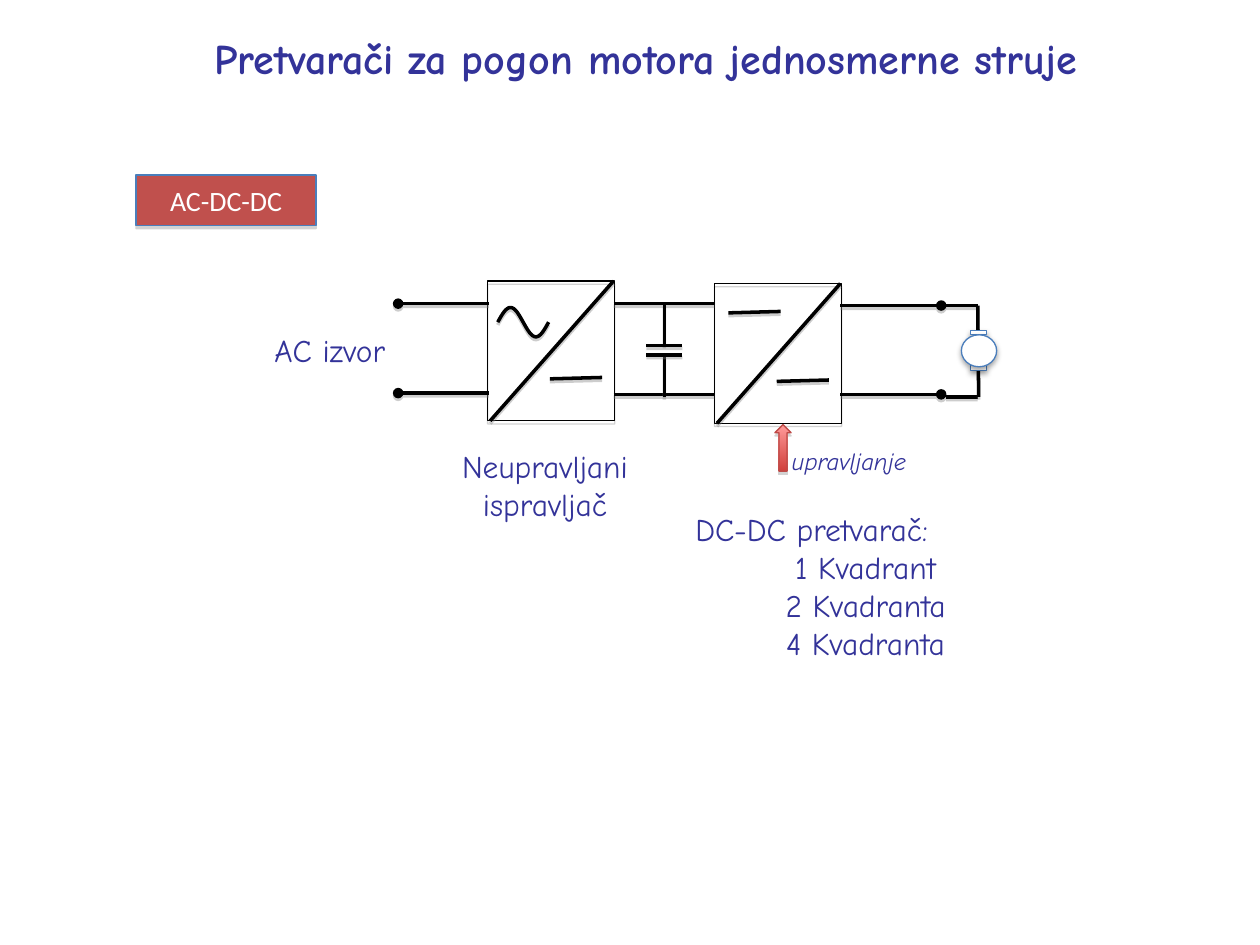
from dataclasses import dataclass
import math

from pptx import Presentation, util as u
from pptx.dml import color
from pptx.enum import shapes, text
from pptx.oxml import parse_xml
from pptx.oxml.ns import nsdecls

COLUMNS, ROWS = 100, 75
CELL = u.Inches(0.1)


@dataclass(frozen=True)
class Theme:
    font: str = "Comic Neue"
    tag_font: str = "Calibri"
    title: int = 24
    body: int = 18
    tag: int = 16
    note: int = 14
    ink: str = "333399"
    wire: str = "000000"
    white: str = "FFFFFF"
    tag_fill: str = "C0504D"
    tag_line: str = "4A7EBB"
    motor_line: str = "4B7EBC"
    arrow_light: str = "FF9A99"
    arrow_dark: str = "D1403C"
    arrow_line: str = "BE4B48"
    thick: float = 2
    thin: float = 0.75
    # Shadows: colour, opacity %, blur pt, distance pt
    shape_shadow: tuple = ("808080", 35, 0, 1.8)
    wire_shadow: tuple = ("808080", 38, 0, 1.6)
    motor_shadow: tuple = ("000000", 35, 3.1, 1.8)


THEME = Theme()


@dataclass(frozen=True)
class Box:
    """An area in grid columns and rows."""
    left: float
    top: float
    width: float
    height: float

    def point(self, x, y):
        return (round((self.left + x * self.width) * CELL),
                round((self.top + y * self.height) * CELL))

    def inner(self, x, y, width, height):
        return Box(self.left + x * self.width, self.top + y * self.height,
                   width * self.width, height * self.height)

    def frame(self):
        return [round(v * CELL) for v in (self.left, self.top, self.width, self.height)]


def rgb(value):
    return color.RGBColor.from_string(value)


def add_shadow(item, shadow):
    tint, opacity, blur, distance = shadow
    properties = item._element.spPr
    for old in properties.findall("{*}effectLst"):
        properties.remove(old)
    properties.append(parse_xml(
        f'<a:effectLst {nsdecls("a")}><a:outerShdw blurRad="{u.Pt(blur)}" '
        f'dist="{u.Pt(distance)}" dir="5400000" rotWithShape="0"><a:srgbClr val="{tint}">'
        f'<a:alpha val="{opacity * 1000}"/></a:srgbClr></a:outerShdw></a:effectLst>'))


def stroke(item, tint, width):
    item.line.color.rgb = rgb(tint)
    item.line.width = u.Pt(width)


def add_block(slide, kind, box, fill, line, shadow):
    block = slide.shapes.add_shape(kind, *box.frame())
    if fill:
        block.fill.solid()
        block.fill.fore_color.rgb = rgb(fill)
    else:
        block.fill.background()
    stroke(block, line, THEME.thin)
    add_shadow(block, shadow)
    return block


def add_wire(slide, box, start, end, terminal=False):
    wire = slide.shapes.add_connector(
        shapes.MSO_CONNECTOR.STRAIGHT, *box.point(*start), *box.point(*end))
    stroke(wire, THEME.wire, THEME.thick)
    if terminal:
        wire.line._get_or_add_ln().append(
            parse_xml(f'<a:tailEnd {nsdecls("a")} type="oval"/>'))
    add_shadow(wire, THEME.wire_shadow)


def write(frame, lines, size, tint, font, aligns, bold=False, italic=False):
    for index, (words, align) in enumerate(zip(lines, aligns)):
        paragraph = frame.add_paragraph() if index else frame.paragraphs[0]
        paragraph.text = words
        paragraph.alignment = align
        face = paragraph.font
        face.name, face.size, face.bold, face.italic = font, u.Pt(size), bold, italic
        face.color.rgb = rgb(tint)


def add_label(slide, box, lines, size, aligns, wrap=False, **style):
    frame = slide.shapes.add_textbox(*box.frame()).text_frame
    frame.word_wrap = wrap
    frame.auto_size = text.MSO_AUTO_SIZE.SHAPE_TO_FIT_TEXT
    write(frame, lines, size, THEME.ink, THEME.font, aligns, **style)


def draw_tag(slide, box):
    tag = add_block(slide, shapes.MSO_SHAPE.RECTANGLE, box,
                    THEME.tag_fill, THEME.tag_line, THEME.shape_shadow)
    tag.text_frame.vertical_anchor = text.MSO_ANCHOR.MIDDLE
    write(tag.text_frame, ["AC-DC-DC"], THEME.tag, THEME.white, THEME.tag_font,
          [text.PP_ALIGN.CENTER])


def draw_sine(slide, box, steps=32):
    points = [box.point(i / steps, 0.5 - 0.5 * math.sin(math.tau * i / steps))
              for i in range(steps + 1)]
    builder = slide.shapes.build_freeform(*points[0])
    builder.add_line_segments(points[1:], close=False)
    wave = builder.convert_to_shape()
    wave.fill.background()
    stroke(wave, THEME.wire, THEME.thick)
    add_shadow(wave, THEME.wire_shadow)


def draw_converter(slide, box, ac_input):
    if ac_input:
        draw_sine(slide, box.inner(0.08, 0.19, 0.4, 0.21))
    else:
        add_wire(slide, box, (0.11, 0.21), (0.52, 0.2))
    add_wire(slide, box, (0.49, 0.7), (0.9, 0.69))
    add_block(slide, shapes.MSO_SHAPE.RECTANGLE, box, None, THEME.wire, THEME.shape_shadow)
    add_wire(slide, box, (0.99, 0), (0.02, 1))


def draw_rails(slide, box, start=0, end=1, terminal=False):
    for y in (0, 1):
        add_wire(slide, box, (start, y), (end, y), terminal)


def draw_capacitor(slide, box):
    for lead, plate in ((0, 0.45), (1, 0.55)):
        add_wire(slide, box, (0.5, lead), (0.5, plate))
        add_wire(slide, box, (0, plate), (1, plate))


def draw_motor(slide, box):
    # Leads along the top, bottom and right of the loop
    draw_rails(slide, box)
    add_wire(slide, box, (1, 0), (1.03, 1))
    # Brushes, then the rotor over them
    pieces = [(shapes.MSO_SHAPE.RECTANGLE, (0.76, y, 0.52, 0.05)) for y in (0.66, 0.27)]
    pieces.append((shapes.MSO_SHAPE.OVAL, (0.48, 0.32, 1.12, 0.35)))
    for kind, area in pieces:
        add_block(slide, kind, box.inner(*area), THEME.white, THEME.motor_line,
                  THEME.motor_shadow)


def draw_control(slide, box):
    arrow = add_block(slide, shapes.MSO_SHAPE.UP_ARROW, box.inner(0, 0, 0.11, 0.82),
                      None, THEME.arrow_line, THEME.shape_shadow)
    arrow.fill.gradient()
    arrow.fill.gradient_angle = 270
    for stop, place, tint in zip(arrow.fill.gradient_stops, (0, 1),
                                 (THEME.arrow_light, THEME.arrow_dark)):
        stop.position = place
        stop.color.rgb = rgb(tint)
    add_label(slide, box.inner(0.03, 0.27, 0.97, 0.73), ["upravljanje"], THEME.note,
              [text.PP_ALIGN.LEFT], italic=True)


def draw_circuit(slide):
    draw_converter(slide, Box(38.7, 22.3, 10.1, 11.1), ac_input=True)
    draw_rails(slide, Box(31.6, 24.1, 7.2, 7.1), 1, 0, terminal=True)
    draw_converter(slide, Box(56.7, 22.5, 10.1, 11.1), ac_input=False)
    draw_rails(slide, Box(48.7, 24.1, 8, 7.2))
    draw_rails(slide, Box(66.7, 24.25, 8, 7.05), terminal=True)
    draw_capacitor(slide, Box(51.3, 24.1, 2.85, 7.4))
    draw_motor(slide, Box(75.1, 24.25, 2.5, 7.25))
    draw_control(slide, Box(61.5, 33.7, 11.7, 4.5))


def draw_labels(slide):
    left, center = text.PP_ALIGN.LEFT, text.PP_ALIGN.CENTER
    add_label(slide, Box(35.3, 35, 15.9, 7), ["Neupravljani", "ispravljač"],
              THEME.body, [center] * 2)
    add_label(slide, Box(54.2, 40, 29, 16),
              ["DC-DC pretvarač:", "1 Kvadrant", "2 Kvadranta", "4 Kvadranta"],
              THEME.body, [left] + [center] * 3, wrap=True)
    add_label(slide, Box(20.8, 25.8, 11.5, 4), ["AC izvor"], THEME.body, [left])


def main():
    deck = Presentation()
    deck.slide_width, deck.slide_height = COLUMNS * CELL, ROWS * CELL
    slide = deck.slides.add_slide(deck.slide_layouts[6])
    add_label(slide, Box(10.1, 2.1, 82.3, 5),
              ["Pretvarači za pogon motora jednosmerne struje"], THEME.title,
              [text.PP_ALIGN.CENTER], bold=True)
    draw_tag(slide, Box(10.8, 13.9, 14.3, 4))
    draw_circuit(slide)
    draw_labels(slide)
    deck.save("out.pptx")


if __name__ == "__main__":
    main()
